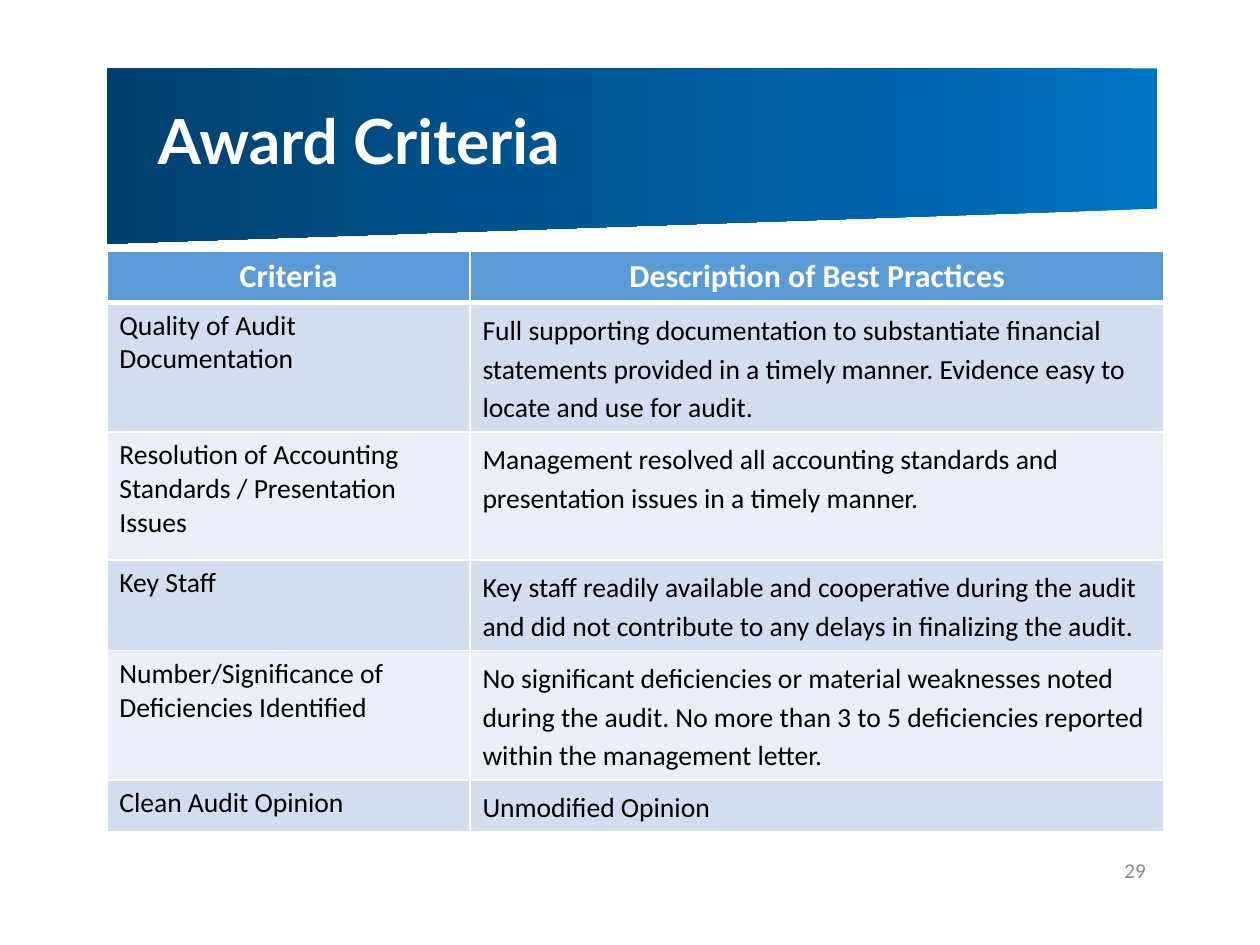
"""Build the Award Criteria slide."""
from dataclasses import dataclass

from lxml import etree
from pptx import Presentation
from pptx.dml.color import RGBColor
from pptx.enum import shapes, text
from pptx.oxml import ns
from pptx.util import Inches, Pt

COLOURS = {
    "white": "FFFFFF",
    "black": "000000",
    "grey": "8C8C8C",
    "header": "5B9BD5",
    "odd_row": "D2DEEF",
    "even_row": "EAEFF7",
    "banner_light": "0070C0",
    "banner_dark": "00406E",
}


@dataclass(frozen=True)
class Criterion:
    """One award criterion, its best practice and its row height."""

    name: str
    practice: str
    height: float


@dataclass(frozen=True)
class Style:
    """Look of a piece of text."""

    size: float
    colour: str
    bold: bool = False
    font: str = "Calibri"
    align: text.PP_ALIGN = text.PP_ALIGN.LEFT
    spacing: float = 1.0


HEADING = Criterion("Criteria", "Description of Best Practices", 0.41)
CRITERIA = [
    Criterion(
        "Quality of Audit Documentation",
        "Full supporting documentation to substantiate financial statements provided "
        "in a timely manner. Evidence easy to locate and use for audit.",
        1.04,
    ),
    Criterion(
        "Resolution of Accounting Standards / Presentation Issues",
        "Management resolved all accounting standards and presentation issues in a timely manner.",
        1.03,
    ),
    Criterion(
        "Key Staff",
        "Key staff readily available and cooperative during the audit and did not "
        "contribute to any delays in finalizing the audit.",
        0.73,
    ),
    Criterion(
        "Number/Significance of Deficiencies Identified",
        "No significant deficiencies or material weaknesses noted during the audit. "
        "No more than 3 to 5 deficiencies reported within the management letter.",
        1.04,
    ),
    Criterion("Clean Audit Opinion", "Unmodified Opinion", 0.4),
]
COLUMN_WIDTHS = [2.92, 5.58]
HEADING_STYLE = Style(18.5, "white", bold=True, align=text.PP_ALIGN.CENTER)
COLUMN_STYLES = [Style(16, "black"), Style(16, "black", spacing=1.15)]
TITLE_STYLE = Style(36, "white", bold=True, font="Lato", spacing=0.9)
NUMBER_STYLE = Style(12.2, "grey", align=text.PP_ALIGN.RIGHT)


def rgb(name: str) -> RGBColor:
    """Return a named colour."""
    return RGBColor.from_string(COLOURS[name])


def write(frame, words: str, style: Style) -> None:
    """Put styled words in a text frame."""
    frame.text = words
    frame.word_wrap = True
    paragraph = frame.paragraphs[0]
    paragraph.alignment = style.align
    paragraph.line_spacing = style.spacing
    for run in paragraph.runs:
        run.font.name = style.font
        run.font.size = Pt(style.size)
        run.font.bold = style.bold
        run.font.color.rgb = rgb(style.colour)


def add_borders(cell, top: float, bottom: float) -> None:
    """Give a cell white borders with the given top and bottom widths."""
    properties = cell._tc.get_or_add_tcPr()
    sides = {"lnL": 1, "lnR": 1, "lnT": top, "lnB": bottom}
    for position, (side, width) in enumerate(sides.items()):
        border = etree.Element(ns.qn(f"a:{side}"), w=str(Pt(width)))
        fill = etree.SubElement(border, ns.qn("a:solidFill"))
        etree.SubElement(fill, ns.qn("a:srgbClr"), val=COLOURS["white"])
        properties.insert(position, border)


def add_banner(slide) -> None:
    """Draw the slanted gradient banner behind the title."""
    banner = slide.shapes.add_shape(
        shapes.MSO_SHAPE.FLOWCHART_MANUAL_INPUT,
        Inches(0.86), Inches(0.55), Inches(8.44), Inches(1.41),
    )
    banner.rotation = 180
    banner.shadow.inherit = False
    banner.line.fill.background()
    banner.fill.gradient()
    banner.fill.gradient_angle = 0
    for stop, colour in zip(banner.fill.gradient_stops, ("banner_light", "banner_dark")):
        stop.color.rgb = rgb(colour)
    slide.shapes._spTree.insert(2, banner._element)


def add_title(slide) -> None:
    """Place the slide title on the banner."""
    title = slide.shapes.title
    title.left, title.top = Inches(1.17), Inches(0.62)
    title.width, title.height = Inches(6.79), Inches(1.08)
    write(title.text_frame, "Award Criteria", TITLE_STYLE)
    title.text_frame.vertical_anchor = text.MSO_ANCHOR.MIDDLE


def add_criteria(slide) -> None:
    """Add the table of criteria."""
    rows = [HEADING, *CRITERIA]
    table = slide.shapes.add_table(
        len(rows), len(COLUMN_WIDTHS), Inches(0.86), Inches(2.02),
        Inches(sum(COLUMN_WIDTHS)), Inches(sum(row.height for row in rows)),
    ).table
    for column, width in zip(table.columns, COLUMN_WIDTHS):
        column.width = Inches(width)
    for index, criterion in enumerate(rows):
        table.rows[index].height = Inches(criterion.height)
        fill = "header" if index == 0 else ("even_row", "odd_row")[index % 2]
        for column, words in enumerate((criterion.name, criterion.practice)):
            cell = table.cell(index, column)
            write(cell.text_frame, words, COLUMN_STYLES[column] if index else HEADING_STYLE)
            cell.fill.solid()
            cell.fill.fore_color.rgb = rgb(fill)
            add_borders(cell, top=3 if index == 1 else 1, bottom=3 if index == 0 else 1)


def add_page_number(slide) -> None:
    """Add the page number at the bottom right."""
    number = slide.shapes.add_textbox(Inches(7.03), Inches(6.8), Inches(2.28), Inches(0.4))
    write(number.text_frame, "29", NUMBER_STYLE)
    number.text_frame.vertical_anchor = text.MSO_ANCHOR.MIDDLE


def main() -> None:
    """Build and save the presentation."""
    deck = Presentation()
    deck.slide_width, deck.slide_height = Inches(10.13), Inches(7.6)
    slide = deck.slides.add_slide(deck.slide_layouts.get_by_name("Title Only"))
    add_banner(slide)
    add_title(slide)
    add_criteria(slide)
    add_page_number(slide)
    deck.save("out.pptx")


if __name__ == "__main__":
    main()
